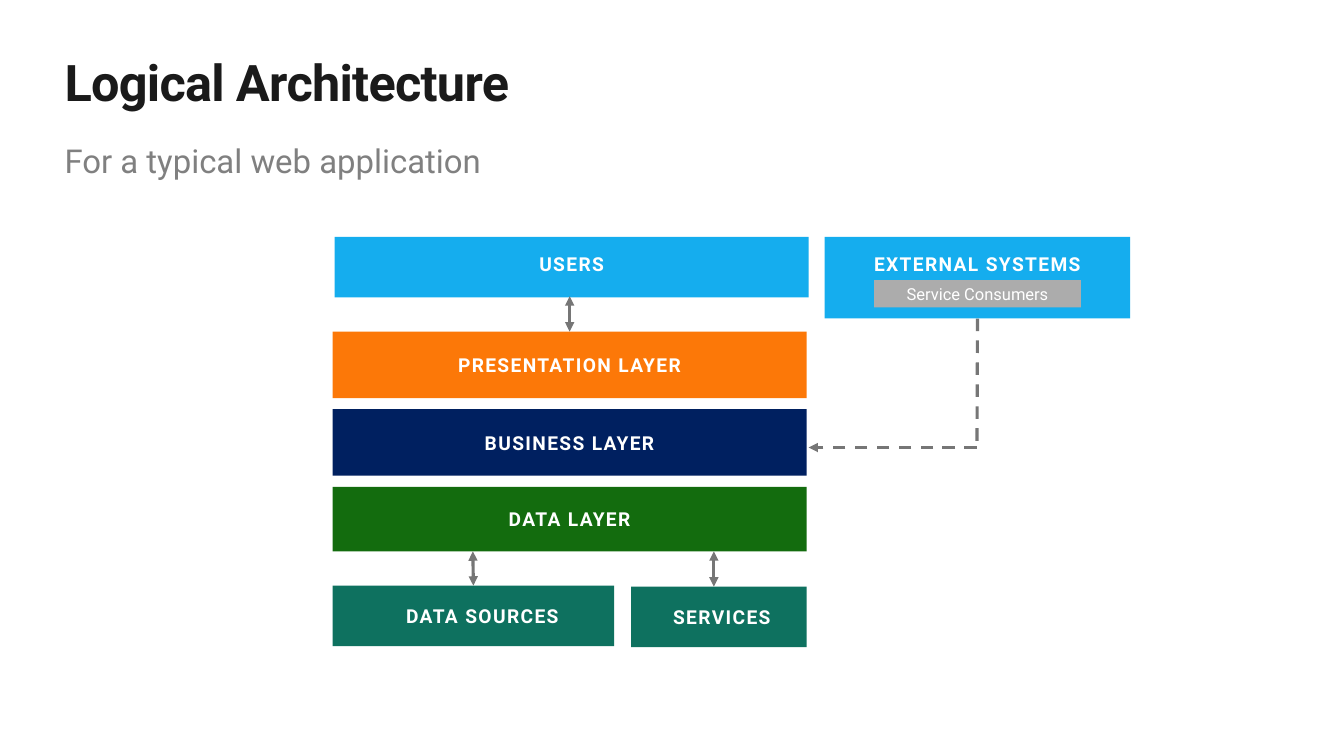
import dataclasses

import lxml.etree
import pptx
import pptx.dml.color
import pptx.enum.dml
import pptx.enum.shapes
import pptx.enum.text
import pptx.oxml.ns
import pptx.util


@dataclasses.dataclass(frozen=True)
class Theme:
    """Colours, type sizes and font of the slide."""

    font: str = "Roboto"
    ink: str = "1A1A1A"
    soft: str = "808080"
    white: str = "FFFFFF"
    sky: str = "15ADEE"
    orange: str = "FC7808"
    navy: str = "002060"
    green: str = "136C0E"
    teal: str = "0E715F"
    silver: str = "ACACAC"
    line: str = "767676"
    title: float = 36
    lead: float = 23.5
    label: float = 13.7
    note: float = 11.8


THEME = Theme()
ANCHOR = pptx.enum.text.MSO_ANCHOR
ALIGN = pptx.enum.text.PP_ALIGN
RECT = pptx.enum.shapes.MSO_SHAPE.RECTANGLE
LEFT, WIDE = 33, 47


def grid(*cells):
    """Turn columns or rows of a tenth of an inch into lengths."""
    return [pptx.util.Inches(cell / 10) for cell in cells]


def tint(code):
    """Return the colour of a hex code."""
    return pptx.dml.color.RGBColor.from_string(code)


def write(shape, text, size, color, bold=False, space=0, align=ALIGN.LEFT,
          anchor=ANCHOR.MIDDLE, pad=(0, 0, 0, 0)):
    """Set one line of text in a shape."""
    frame = shape.text_frame
    frame.word_wrap = True
    frame.vertical_anchor = anchor
    (frame.margin_left, frame.margin_top,
     frame.margin_right, frame.margin_bottom) = grid(*pad)
    line = frame.paragraphs[0]
    line.alignment = align
    run = line.add_run()
    run.text = text
    if space:
        run._r.get_or_add_rPr().set("spc", str(int(space * 100)))
    font = line.font
    font.name, font.size, font.bold = THEME.font, pptx.util.Pt(size), bold
    font.color.rgb = tint(color)


def head(slide, place, text, size, color, **style):
    """Add a heading."""
    write(slide.shapes.add_textbox(*grid(*place)), text, size, color, **style)


def block(slide, place, text, fill, size=THEME.label, bold=True, space=1, **style):
    """Add a filled block with a centred label."""
    shape = slide.shapes.add_shape(RECT, *grid(*place))
    shape.shadow.inherit = False
    shape.fill.solid()
    shape.fill.fore_color.rgb = tint(fill)
    shape.line.fill.background()
    write(shape, text, size, THEME.white, bold, space, ALIGN.CENTER, **style)
    return shape


def link(slide, start, end, tips=(), dash=False):
    """Add a straight line with arrowheads at the named tips."""
    kind = pptx.enum.shapes.MSO_CONNECTOR.STRAIGHT
    line = slide.shapes.add_connector(kind, *grid(*start, *end))
    line.line.color.rgb = tint(THEME.line)
    line.line.width = pptx.util.Pt(2.25)
    if dash:
        line.line.dash_style = pptx.enum.dml.MSO_LINE.DASH
    name = pptx.oxml.ns.qn
    for tip in tips:
        lxml.etree.SubElement(line.line._get_or_add_ln(), name(tip), type="triangle")
    lxml.etree.SubElement(line._element.spPr, name("a:effectLst"))
    return line


def main():
    """Build the slide and save it."""
    deck = pptx.Presentation()
    deck.slide_width, deck.slide_height = grid(133.3, 75)
    slide = deck.slides.add_slide(deck.slide_layouts[6])

    head(slide, (6.4, 5, 120.5, 6.1), "Logical Architecture", THEME.title,
         THEME.ink, bold=True, space=-0.5)
    head(slide, (6.4, 14, 126.9, 4), "For a typical web application",
         THEME.lead, THEME.soft, anchor=ANCHOR.TOP)

    top = {"anchor": ANCHOR.TOP, "pad": (2, 1.5, 2, 1.6)}
    block(slide, (33.2, 23.5, WIDE, 6), "USERS", THEME.sky, **top)
    outer = block(slide, (81.8, 23.5, 30.3, 8.1), "EXTERNAL SYSTEMS", THEME.sky, **top)
    block(slide, (86.7, 27.8, 20.5, 2.7), "Service Consumers", THEME.silver,
          THEME.note, False, 0)

    layers = [("PRESENTATION LAYER", THEME.orange, 6.6),
              ("BUSINESS LAYER", THEME.navy, 6.6),
              ("DATA LAYER", THEME.green, 6.4)]
    stack = [block(slide, (LEFT, 32.9 + 7.7 * row, WIDE, tall), text, fill)
             for row, (text, fill, tall) in enumerate(layers)]
    store = block(slide, (LEFT, 58.1, 27.9, 6), "DATA SOURCES", THEME.teal,
                  pad=(1.8, 0, 0, 0))
    block(slide, (62.6, 58.2, 17.4, 6), "SERVICES", THEME.teal, pad=(0.6, 0, 0, 0))

    both = ("a:headEnd", "a:tailEnd")
    drop = link(slide, (96.95, 31.6), (96.9, 44.5), dash=True)
    drop.begin_connect(outer, 2)
    link(slide, (96.9, 44.4), (80.2, 44.4), both[1:], dash=True)
    link(slide, (56.5, 29.4), (56.5, 32.9), both).end_connect(stack[0], 0)
    link(slide, (46.9, 54.7), (46.9, 58.1), both).end_connect(store, 0)
    link(slide, (70.8, 54.7), (70.8, 58.2), both)

    deck.save("out.pptx")


if __name__ == "__main__":
    main()
